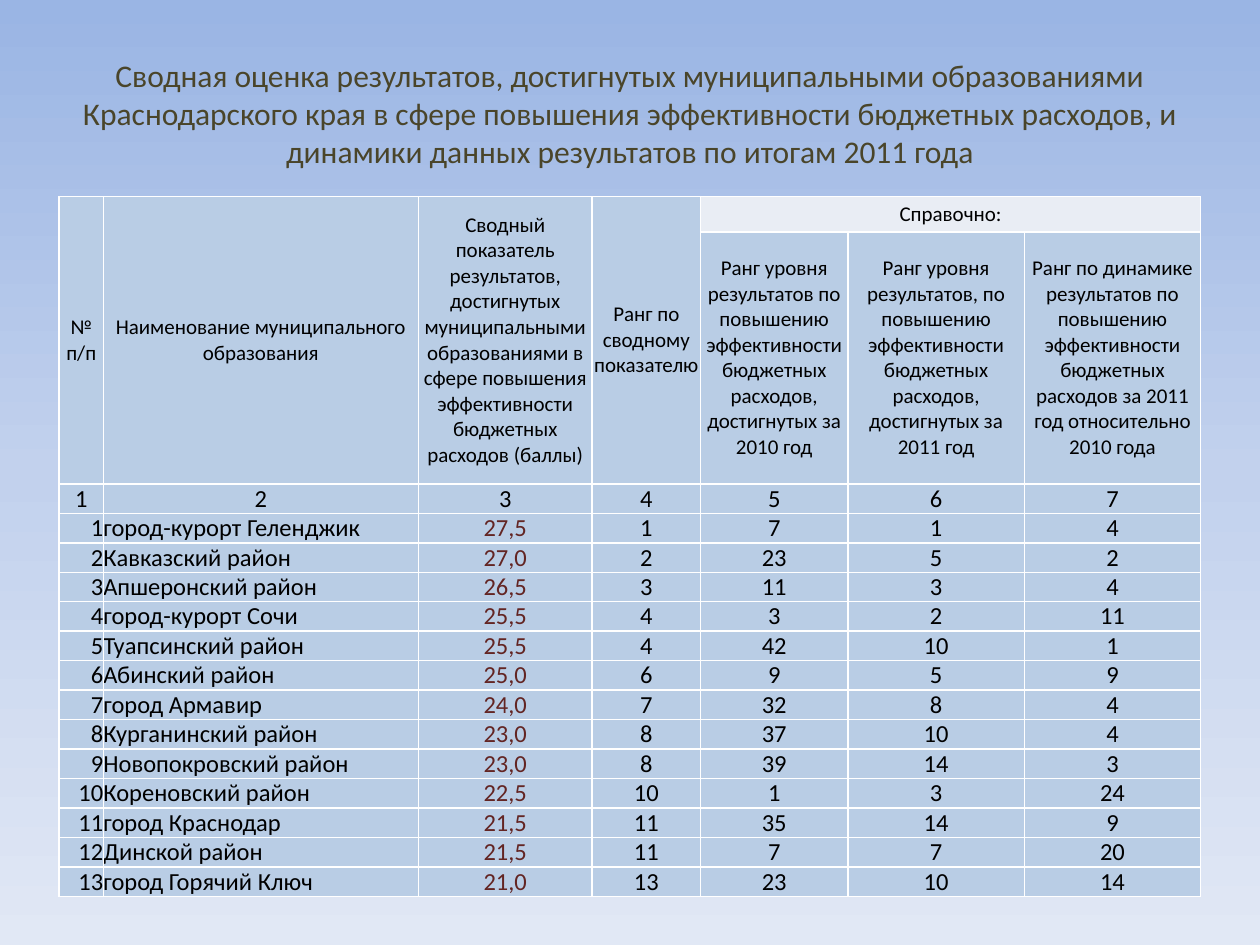
from copy import deepcopy

from lxml import etree
from pptx import Presentation
from pptx.dml.color import RGBColor
from pptx.enum.text import MSO_ANCHOR, MSO_AUTO_SIZE, PP_ALIGN
from pptx.oxml.ns import qn
from pptx.util import Inches, Pt

LEFT, CENTER, RIGHT = PP_ALIGN.LEFT, PP_ALIGN.CENTER, PP_ALIGN.RIGHT
MIDDLE, BOTTOM = MSO_ANCHOR.MIDDLE, MSO_ANCHOR.BOTTOM
FIT_SHAPE = MSO_AUTO_SIZE.SHAPE_TO_FIT_TEXT

FONT = "Calibri"
COLORS = {
    "sky_top": "9AB5E4",
    "sky_middle": "C2D1ED",
    "sky_bottom": "E1E8F5",
    "title": "4A452A",
    "cell": "B9CDE5",
    "reference": "E9EDF4",
    "border": "FFFFFF",
    "text": "000000",
    "score": "632523",
}
COLUMN_WIDTHS = [0.35, 2.5, 1.38, 0.86, 1.17, 1.4, 1.4]
HEADER_HEIGHTS = [0.28, 2.0]
ROW_HEIGHT = 0.23

MAIN_HEADERS = [
    "№ п/п",
    "Наименование муниципального образования",
    "Сводный показатель результатов, достигнутых муниципальными образованиями "
    "в сфере повышения эффективности бюджетных расходов (баллы)",
    "Ранг по сводному показателю",
]
RANK_HEADERS = [
    "Ранг уровня результатов по повышению эффективности бюджетных расходов, "
    "достигнутых за 2010 год",
    "Ранг уровня результатов, по повышению эффективности бюджетных расходов, "
    "достигнутых за 2011 год",
    "Ранг по динамике результатов по повышению эффективности бюджетных "
    "расходов за 2011 год относительно 2010 года",
]
MUNICIPALITIES = [
    ("город-курорт Геленджик", "27,5", 1, 7, 1, 4),
    ("Кавказский район", "27,0", 2, 23, 5, 2),
    ("Апшеронский район", "26,5", 3, 11, 3, 4),
    ("город-курорт Сочи", "25,5", 4, 3, 2, 11),
    ("Туапсинский район", "25,5", 4, 42, 10, 1),
    ("Абинский район", "25,0", 6, 9, 5, 9),
    ("город Армавир", "24,0", 7, 32, 8, 4),
    ("Курганинский район", "23,0", 8, 37, 10, 4),
    ("Новопокровский район", "23,0", 8, 39, 14, 3),
    ("Кореновский район", "22,5", 10, 1, 3, 24),
    ("город Краснодар", "21,5", 11, 35, 14, 9),
    ("Динской район", "21,5", 11, 7, 7, 20),
    ("город Горячий Ключ", "21,0", 13, 23, 10, 14),
]


def format_text(frame, size, color, align):
    for paragraph in frame.paragraphs:
        paragraph.alignment = align
        for run in paragraph.runs:
            run.font.name = FONT
            run.font.size = Pt(size)
            run.font.color.rgb = RGBColor.from_string(COLORS[color])


def add_borders(cell):
    properties = cell._tc.get_or_add_tcPr()
    for side in ("lnL", "lnR", "lnT", "lnB"):
        line = etree.SubElement(properties, qn(f"a:{side}"), w=str(Pt(1)))
        fill = etree.SubElement(line, qn("a:solidFill"))
        etree.SubElement(fill, qn("a:srgbClr"), val=COLORS["border"])


prs = Presentation()
prs.slide_width, prs.slide_height = Inches(10), Inches(7.5)
slide = prs.slides.add_slide(prs.slide_layouts[5])

# Background: three-stop gradient from top to bottom
sky = slide.background.fill
sky.gradient()
sky.gradient_angle = 270
first_stop = sky.gradient_stops[0]._gs
first_stop.addnext(deepcopy(first_stop))
for stop, position, name in zip(
    sky.gradient_stops, (0, 0.5, 1), ("sky_top", "sky_middle", "sky_bottom")
):
    stop.position = position
    stop.color.rgb = RGBColor.from_string(COLORS[name])

# Title
title = slide.shapes.title
title.left, title.top = Inches(0.47), Inches(0.39)
title.width, title.height = Inches(9.06), Inches(1.01)
title.text_frame.text = (
    "Сводная оценка результатов, достигнутых муниципальными образованиями "
    "Краснодарского края в сфере повышения эффективности бюджетных расходов, "
    "и динамики данных результатов по итогам 2011 года"
)
title.text_frame.word_wrap = True
title.text_frame.auto_size = FIT_SHAPE
title.text_frame.vertical_anchor = MIDDLE
format_text(title.text_frame, 18, "title", CENTER)

# Table
rows = [
    MAIN_HEADERS + ["Справочно:", "", ""],
    [""] * len(MAIN_HEADERS) + RANK_HEADERS,
    range(1, len(COLUMN_WIDTHS) + 1),
]
rows += [(number, *values) for number, values in enumerate(MUNICIPALITIES, 1)]
heights = HEADER_HEIGHTS + [ROW_HEIGHT] * (len(rows) - len(HEADER_HEIGHTS))
table = slide.shapes.add_table(
    len(rows), len(COLUMN_WIDTHS), Inches(0.47), Inches(1.56),
    Inches(sum(COLUMN_WIDTHS)), Inches(sum(heights)),
).table
table.first_row = table.horz_banding = False
for column, width in zip(table.columns, COLUMN_WIDTHS):
    column.width = Inches(width)
for row, height in zip(table.rows, heights):
    row.height = Inches(height)

for c in range(len(MAIN_HEADERS)):
    table.cell(0, c).merge(table.cell(1, c))
table.cell(0, 4).merge(table.cell(0, 6))

for r, values in enumerate(rows):
    is_data = r > 2
    size = 12 if r < 2 else 14
    for c, value in enumerate(values):
        cell = table.cell(r, c)
        cell.margin_left = cell.margin_right = 0
        cell.margin_top = cell.margin_bottom = 0
        cell.vertical_anchor = BOTTOM if is_data else MIDDLE
        add_borders(cell)
        cell.fill.solid()
        fill_name = "reference" if r == 0 and c >= 4 else "cell"
        cell.fill.fore_color.rgb = RGBColor.from_string(COLORS[fill_name])
        if cell.is_spanned:
            continue
        cell.text_frame.text = str(value)
        align = {0: RIGHT, 1: LEFT}.get(c, CENTER) if is_data else CENTER
        color = "score" if is_data and c == 2 else "text"
        format_text(cell.text_frame, size, color, align)

prs.save("out.pptx")
